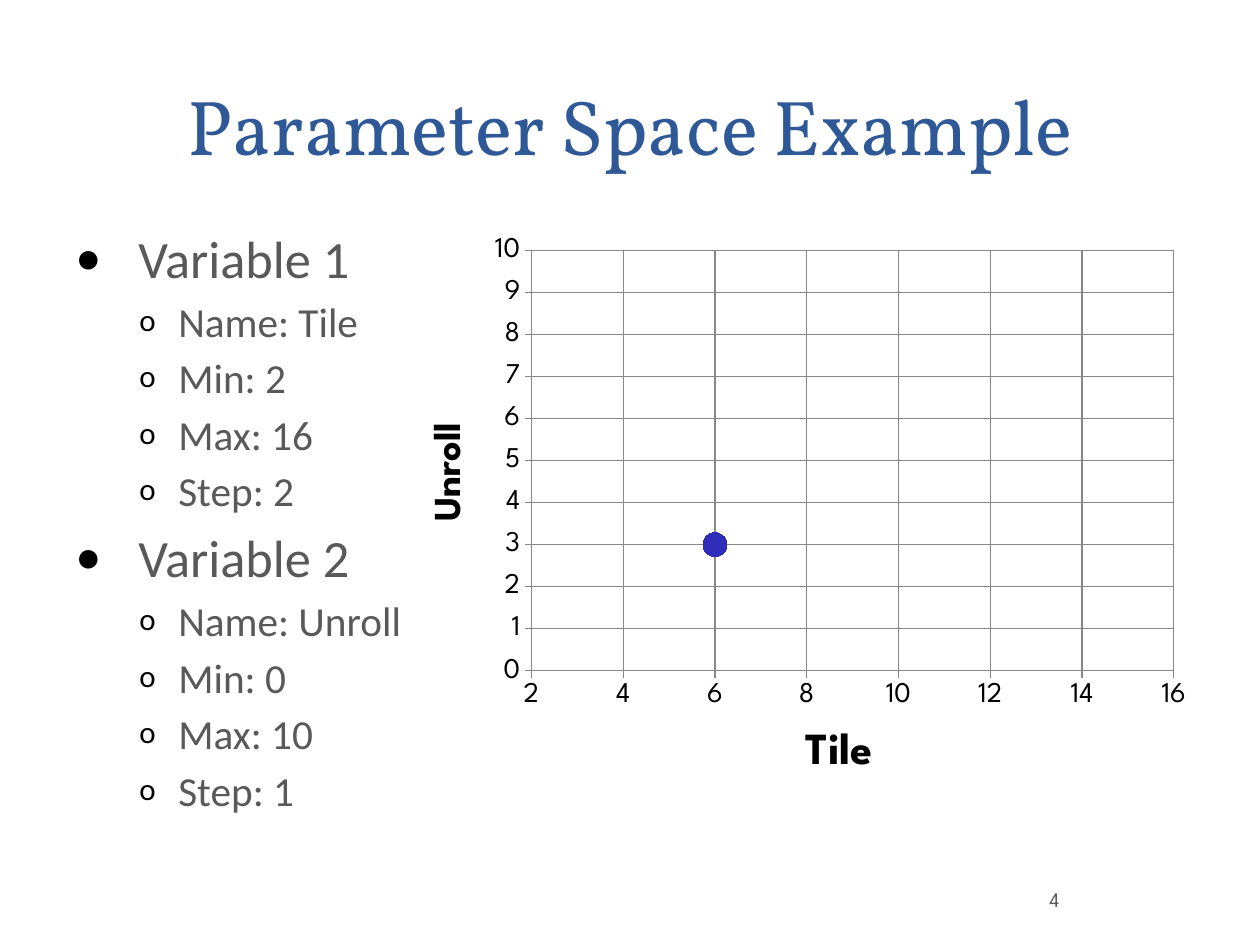
from lxml import etree
from pptx import Presentation
from pptx.chart.data import XyChartData
from pptx.dml.color import RGBColor
from pptx.enum import chart as charts, text
from pptx.oxml import ns
from pptx.util import Cm, Inches, Pt

BLUE = RGBColor(0x2F, 0x58, 0x97)
GRAY = RGBColor(0x59, 0x59, 0x59)
MARKER_BLUE = RGBColor(0x2D, 0x2D, 0xB9)
GRID_GRAY = RGBColor(0x87, 0x87, 0x87)
BLACK = RGBColor(0, 0, 0)
CHART_FONT = "League Spartan"
CHART_WIDTH, CHART_HEIGHT = 7, 5.08

presentation = Presentation()
presentation.slide_width = Cm(28)
presentation.slide_height = Cm(21)
slide = presentation.slides.add_slide(presentation.slide_layouts[6])


def add_text_frame(left, top, width, height, anchor):
    """Add a wrapping text box, measured in inches."""
    box = slide.shapes.add_textbox(*map(Inches, (left, top, width, height)))
    frame = box.text_frame
    frame.word_wrap = True
    frame.vertical_anchor = anchor
    frame.margin_left = frame.margin_right = Inches(0.11)
    frame.margin_top = frame.margin_bottom = Inches(0.06)
    return frame


def place_chart_part(element, **lengths):
    """Set a manual layout, in inches from the chart's corner."""
    for old_layout in element.findall(ns.qn("c:layout")):
        element.remove(old_layout)
    layout = etree.Element(ns.qn("c:layout"))
    manual = etree.SubElement(layout, ns.qn("c:manualLayout"))
    if "w" in lengths:
        etree.SubElement(manual, ns.qn("c:layoutTarget"), val="inner")
    for mode in ("xMode", "yMode"):
        etree.SubElement(manual, ns.qn(f"c:{mode}"), val="edge")
    for name, length in lengths.items():
        whole = CHART_WIDTH if name in "xw" else CHART_HEIGHT
        etree.SubElement(manual, ns.qn(f"c:{name}"), val=str(length / whole))
    element.insert(0 if element.find(ns.qn("c:tx")) is None else 1, layout)


# Title
title = add_text_frame(0.55, 0.36, 9.92, 1.38, text.MSO_ANCHOR.MIDDLE).paragraphs[0]
title.text = "Parameter Space Example"
title.alignment = text.PP_ALIGN.CENTER
title.line_spacing = Pt(63.8)
title.font.name, title.font.size = "Vollkorn", Pt(49)
title.font.color.rgb = BLUE

# Variables
variables = {
    "Variable 1": ["Name: Tile", "Min: 2", "Max: 16", "Step: 2"],
    "Variable 2": ["Name: Unroll", "Min: 0", "Max: 10", "Step: 1"],
}
lines = []
for variable, settings in variables.items():
    lines += [(variable, 0)] + [(setting, 1) for setting in settings]
# level: text size, space before, left margin, indent, bullet, bullet percent
level_styles = [(33, 6.6, 0.55, -0.55, "•", 100), (26, 4.4, 0.9, -0.34, "o", 75)]

body = add_text_frame(0.55, 1.92, 9.92, 5.45, text.MSO_ANCHOR.TOP)
for index, (line, level) in enumerate(lines):
    size, space, margin, indent, bullet, percent = level_styles[level]
    paragraph = body.add_paragraph() if index else body.paragraphs[0]
    paragraph.text = line
    paragraph.level = level
    if index:
        paragraph.space_before = Pt(space)
    properties = paragraph._p.get_or_add_pPr()
    properties.set("marL", str(Inches(margin)))
    properties.set("indent", str(Inches(indent)))
    bullet_color = etree.SubElement(properties, ns.qn("a:buClr"))
    etree.SubElement(bullet_color, ns.qn("a:srgbClr"), val=str(BLACK))
    etree.SubElement(properties, ns.qn("a:buSzPct"), val=str(percent * 1000))
    etree.SubElement(properties, ns.qn("a:buFont"), typeface="Calibri")
    etree.SubElement(properties, ns.qn("a:buChar"), char=bullet)
    paragraph.font.name, paragraph.font.size = "Calibri", Pt(size)
    paragraph.font.color.rgb = GRAY

# Parameter space chart
data = XyChartData()
data.add_series("Series 1").add_data_point(6, 3)
chart = slide.shapes.add_chart(
    charts.XL_CHART_TYPE.XY_SCATTER,
    *map(Inches, (3.51, 1.97, CHART_WIDTH, CHART_HEIGHT)), data).chart
chart.has_legend = chart.has_title = False
chart.font.name, chart.font.size = CHART_FONT, Pt(18)
chart.font.color.rgb = BLACK
chart.plots[0].vary_by_categories = False
place_chart_part(chart._chartSpace.chart.plotArea, x=1.14, y=0.22, w=5.62, h=3.68)

series = chart.plots[0].series[0]
series.smooth = False
series.format.line.fill.background()
series.marker.style = charts.XL_MARKER_STYLE.CIRCLE
series.marker.size = 15
series.marker.format.fill.solid()
series.marker.format.fill.fore_color.rgb = MARKER_BLUE
series.marker.format.line.color.rgb = MARKER_BLUE

axes = [
    (chart.category_axis, "Tile", 28, 2, 16, 2, 3.47, 4.33),
    (chart.value_axis, "Unroll", 24, 0, 10, 1, 0.19, 1.67),
]
for axis, name, size, low, high, step, left, top in axes:
    axis.minimum_scale, axis.maximum_scale, axis.major_unit = low, high, step
    axis.has_major_gridlines = True
    axis.major_tick_mark = charts.XL_TICK_MARK.OUTSIDE
    axis.minor_tick_mark = charts.XL_TICK_MARK.NONE
    for axis_line in (axis.format.line, axis.major_gridlines.format.line):
        axis_line.color.rgb = GRID_GRAY
        axis_line.width = Pt(0.75)
    axis.tick_labels.number_format = "General"
    axis.tick_labels.number_format_is_linked = False
    axis.axis_title.text_frame.text = name
    title_font = axis.axis_title.text_frame.paragraphs[0].runs[0].font
    title_font.name, title_font.size, title_font.bold = CHART_FONT, Pt(size), True
    title_font.color.rgb = BLACK
    place_chart_part(axis.axis_title._element, x=left, y=top)

# Slide number
number_frame = add_text_frame(9.15, 7.59, 0.68, 0.55, text.MSO_ANCHOR.MIDDLE)
number_frame.margin_left, number_frame.margin_right = Inches(0.03), Inches(0.06)
number = number_frame.paragraphs[0]
number.text = "4"
number.font.name, number.font.size = CHART_FONT, Pt(13)
number.font.color.rgb = GRAY

presentation.save("out.pptx")
